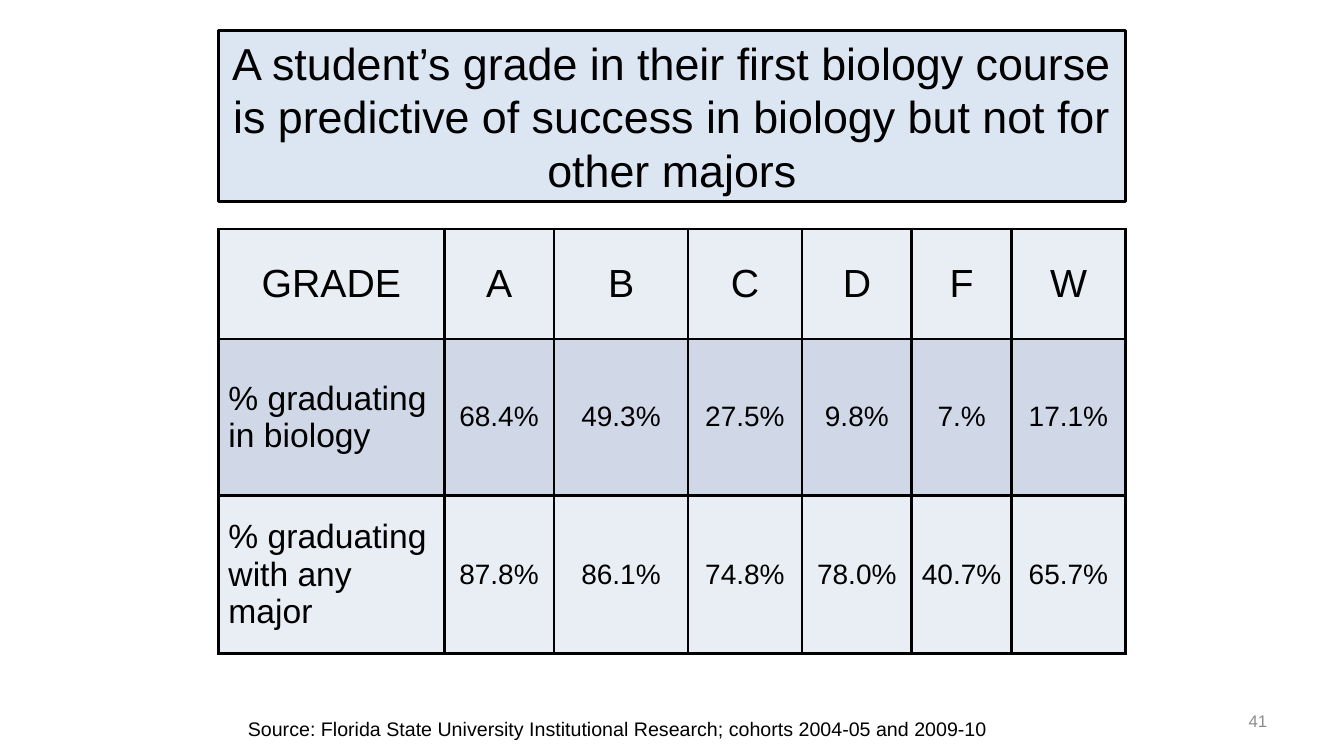
from lxml import etree
from pptx import Presentation, util as u
from pptx.dml.color import RGBColor
from pptx.enum import text
from pptx.oxml.ns import qn

LEFT, CENTER, RIGHT = text.PP_ALIGN.LEFT, text.PP_ALIGN.CENTER, text.PP_ALIGN.RIGHT
MIDDLE = text.MSO_ANCHOR.MIDDLE
INK, GRAY, SKY = "000000", "8C8C8C", "DCE6F2"
PALE, DEEP = "E9EDF4", "D0D8E8"
EDGE = 2.25

GRADES = [
    ["GRADE", "A", "B", "C", "D", "F", "W"],
    ["% graduating in biology", "68.4%", "49.3%", "27.5%", "9.8%", "7.%", "17.1%"],
    ["% graduating with any major", "87.8%", "86.1%", "74.8%", "78.0%", "40.7%", "65.7%"],
]
COLS = [2.24, 1.09, 1.33, 1.13, 1.09, 0.99, 1.13]
ROWS = [1.09, 1.55, 1.57]


def color(code):
    return RGBColor.from_string(code)


def paint(item, code):
    item.fill.solid()
    item.fill.fore_color.rgb = color(code)


class Deck:
    """Style and current slide; boxes are (left, top, width, height) in percent."""

    font = "Arial"

    def __init__(self):
        self.prs = Presentation()
        self.prs.slide_width = u.Inches(13.33)
        self.prs.slide_height = u.Inches(7.5)
        self.slide = self.prs.slides.add_slide(self.prs.slide_layouts[5])

    def place(self, box):
        wide, high = self.prs.slide_width, self.prs.slide_height
        return [int(part * side / 100) for part, side in zip(box, (wide, high) * 2)]

    def letter(self, frame, words, size, align=LEFT, ink=INK):
        """Set the words of a text frame and their font."""
        frame.text = words
        para = frame.paragraphs[0]
        para.alignment = align
        para.font.name, para.font.size = self.font, u.Pt(size)
        para.font.bold = False
        para.font.color.rgb = color(ink)

    def title(self, words, box, size):
        head = self.slide.shapes.title
        head.left, head.top, head.width, head.height = self.place(box)
        paint(head, SKY)
        head.line.color.rgb = color(INK)
        head.line.width = u.Pt(EDGE)
        frame = head.text_frame
        frame.word_wrap = True
        frame.auto_size = text.MSO_AUTO_SIZE.NONE
        frame.vertical_anchor = MIDDLE
        self.letter(frame, words, size, CENTER)

    def label(self, words, box, size, wrap=True, **look):
        frame = self.slide.shapes.add_textbox(*self.place(box)).text_frame
        frame.word_wrap = wrap
        if wrap:
            frame.vertical_anchor = MIDDLE
        self.letter(frame, words, size, **look)

    def border(self, cell):
        props = cell._tc.get_or_add_tcPr()
        for spot, side in enumerate(("a:lnL", "a:lnR", "a:lnT", "a:lnB")):
            line = etree.Element(qn(side), w=str(u.Pt(EDGE)))
            fill = etree.SubElement(line, qn("a:solidFill"))
            etree.SubElement(fill, qn("a:srgbClr"), val=INK)
            props.insert(spot, line)

    def table(self, data, box, cols, rows):
        """Draw data in a grid whose cols and rows are relative sizes."""
        left, top, wide, high = self.place(box)
        grid = self.slide.shapes.add_table(
            len(rows), len(cols), left, top, wide, high).table
        for col, part in zip(grid.columns, cols):
            col.width = int(wide * part / sum(cols))
        for row, part in zip(grid.rows, rows):
            row.height = int(high * part / sum(rows))
        for r, line in enumerate(data):
            for c, words in enumerate(line):
                cell = grid.cell(r, c)
                paint(cell, DEEP if r % 2 else PALE)
                self.border(cell)
                cell.vertical_anchor = MIDDLE
                size = 28 if r == 0 else 24 if c == 0 else 20
                align = LEFT if r and c == 0 else CENTER
                self.letter(cell.text_frame, words, size, align)


def main():
    deck = Deck()
    deck.title("A student’s grade in their first biology course is predictive "
               "of success in biology but not for other majors",
               (16.25, 4, 67.5, 22.67), 32)
    deck.table(GRADES, (16.25, 30.3, 67.5, 56.2), COLS, ROWS)
    deck.label("41", (71.7, 92.67, 23.33, 5.33), 12, align=RIGHT, ink=GRAY)
    deck.label("Source: Florida State University Institutional Research; "
               "cohorts 2004-05 and 2009-10",
               (17.7, 94.13, 56.94, 4.5), 14, wrap=False)
    deck.prs.save("out.pptx")


if __name__ == "__main__":
    main()
